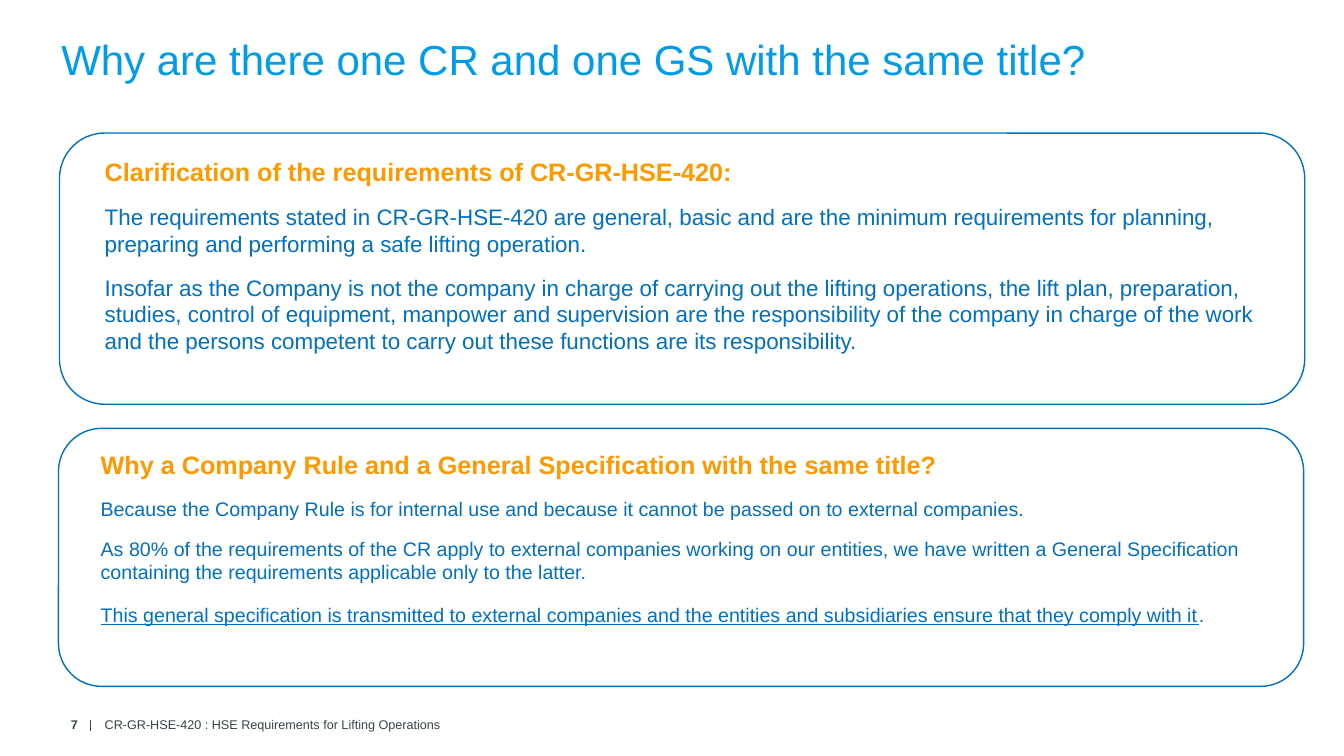
"""Build the slide explaining why a CR and a GS share one title."""
from pptx import Presentation
from pptx.dml.color import RGBColor
from pptx.enum.shapes import MSO_CONNECTOR, MSO_SHAPE
from pptx.enum.text import MSO_ANCHOR, PP_ALIGN
from pptx.oxml.ns import qn
from pptx.util import Inches, Pt
from lxml.etree import SubElement

SKY, BLUE, ORANGE, GREY = "009CEA", "0070C0", "FF9900", "374649"


def paint(color_format, hex_color):
    color_format.rgb = RGBColor.from_string(hex_color)


def write(at, paragraphs, anchor=MSO_ANCHOR.TOP):
    frame = slide.shapes.add_textbox(*map(Inches, at)).text_frame
    frame.word_wrap = True
    frame.vertical_anchor = anchor
    for index, (runs, size, color, bold, layout) in enumerate(paragraphs):
        paragraph = frame.paragraphs[0] if index == 0 else frame.add_paragraph()
        for name, value in layout.items():
            setattr(paragraph, name, value)
        for words, underlined in runs:
            run = paragraph.add_run()
            run.text = words
            look = {"name": "Arial", "size": Pt(size), "bold": bold, "underline": underlined}
            for name, value in look.items():
                setattr(run.font, name, value)
            paint(run.font.color, color)


deck = Presentation()
deck.slide_width, deck.slide_height = Inches(13.33), Inches(7.5)
slide = deck.slides.add_slide(deck.slide_layouts[6])

footer_bar = slide.shapes.add_connector(
    MSO_CONNECTOR.STRAIGHT, Inches(0.9), Inches(7.14), Inches(0.9), Inches(7.25))
footer_bar.line.width = Pt(1)
paint(footer_bar.line.color, GREY)
SubElement(footer_bar._element.spPr, qn("a:effectLst"))

title = "Why are there one CR and one GS with the same title?"
write((0.51, 0.27, 10.63, 0.62), [([(title, False)], 30, SKY, False, {})], MSO_ANCHOR.MIDDLE)

spaced = {"space_after": Pt(12)}
closing = {"space_after": Pt(6), "line_spacing": 1.1, "alignment": PP_ALIGN.JUSTIFY}
panels = [
    ((0.59, 1.32, 12.35, 2.69), (0.94, 1.5, 11.71, 2.09), 16,
     "Clarification of the requirements of CR-GR-HSE-420:", [
         ([("The requirements stated in CR-GR-HSE-420 are general, basic and are the minimum "
            "requirements for planning, preparing and performing a safe lifting operation.",
            False)], spaced),
         ([("Insofar as the Company is not the company in charge of carrying out the lifting "
            "operations, the lift plan, preparation, studies, control of equipment, manpower and "
            "supervision are the responsibility of the company in charge of the work and the "
            "persons competent to carry out these functions are its responsibility.",
            False)], {}),
     ]),
    ((0.58, 4.25, 12.35, 2.56), (0.9, 4.41, 11.71, 1.85), 14,
     "Why a Company Rule and a General Specification with the same title?", [
         ([("Because the Company Rule is for internal use and because it cannot be passed on to "
            "external companies.", False)], spaced),
         ([("As 80% of the requirements of the CR apply to external companies working on our "
            "entities, we have written a General Specification containing the requirements "
            "applicable only to the latter.", False)], spaced),
         ([("This general specification is transmitted to external companies and the entities "
            "and subsidiaries ensure that they comply with it", True), (".", False)], closing),
     ]),
]
for border_at, text_at, body_size, heading, body in panels:
    border = slide.shapes.add_shape(MSO_SHAPE.ROUNDED_RECTANGLE, *map(Inches, border_at))
    border.shadow.inherit = False
    border.fill.background()
    border.line.width = Pt(1)
    paint(border.line.color, BLUE)
    write(text_at, [([(heading, False)], 18, ORANGE, True, spaced)]
          + [(runs, body_size, BLUE, False, layout) for runs, layout in body])

footer = [
    ((0.24, 7.05, 0.63, 0.28), "7", True, PP_ALIGN.RIGHT),
    ((0.94, 7.05, 11.65, 0.28), "CR-GR-HSE-420 : HSE Requirements for Lifting Operations",
     False, PP_ALIGN.LEFT),
]
for at, words, bold, alignment in footer:
    write(at, [([(words, False)], 9, GREY, bold, {"alignment": alignment})], MSO_ANCHOR.MIDDLE)

deck.save("out.pptx")
